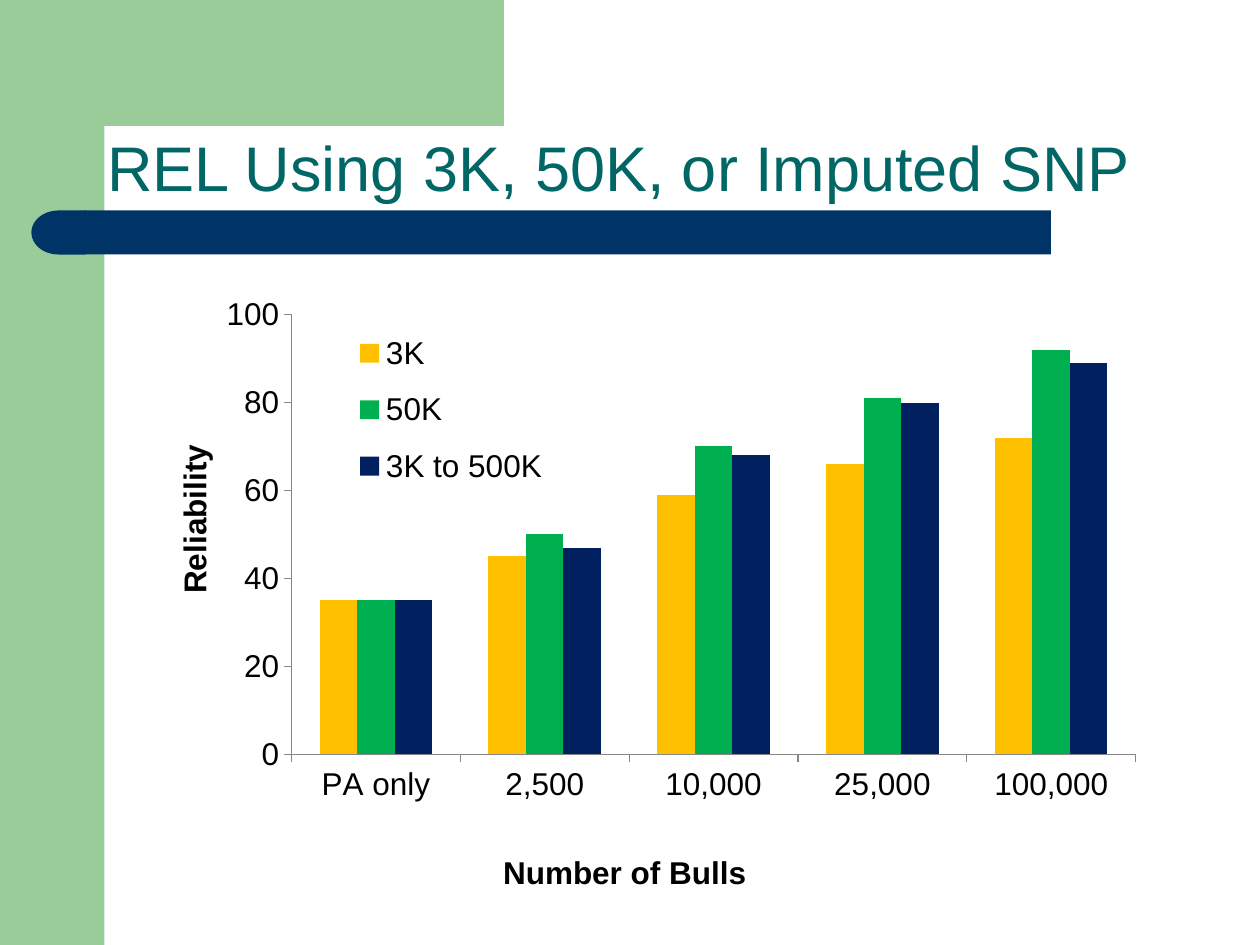
"""Build a slide comparing reliability for three SNP sets in a clustered column chart."""
import math

from lxml import etree
from pptx import Presentation
from pptx import util as u
from pptx.chart.data import CategoryChartData
from pptx.dml.color import RGBColor
from pptx.enum import chart as charts, shapes, text
from pptx.oxml.ns import qn

GREEN = RGBColor(0x99, 0xCC, 0x99)
NAVY = RGBColor(0x00, 0x33, 0x66)
TEAL = RGBColor(0x00, 0x66, 0x66)
BLACK = RGBColor(0x00, 0x00, 0x00)
GREY = RGBColor(0x86, 0x86, 0x86)
SERIES = [
    ("3K", (35, 45, 59, 66, 72), RGBColor(0xFF, 0xC0, 0x00)),
    ("50K", (35, 50, 70, 81, 92), RGBColor(0x00, 0xB0, 0x50)),
    ("3K to 500K", (35, 47, 68, 80, 89), RGBColor(0x00, 0x20, 0x60)),
]


def paint(shape, color):
    """Give a shape a flat fill with no line or shadow."""
    shape.fill.solid()
    shape.fill.fore_color.rgb = color
    shape.line.fill.background()
    shape.shadow.inherit = False


def place(element, index, **settings):
    """Set the manual layout of a chart part."""
    for old in element.findall(qn("c:layout")):
        element.remove(old)
    layout = etree.Element(qn("c:layout"))
    manual = etree.SubElement(layout, qn("c:manualLayout"))
    for name, value in settings.items():
        etree.SubElement(manual, qn(f"c:{name}")).set("val", str(value))
    element.insert(index, layout)


deck = Presentation()
deck.slide_width, deck.slide_height = u.Inches(10), u.Inches(7.5)
page = deck.slides.add_slide(deck.slide_layouts[5])

band = u.Inches(0.83)
side = page.shapes.add_shape(shapes.MSO_SHAPE.RECTANGLE, 0, 0, band, deck.slide_height)
paint(side, GREEN)

radius, edge = 0.33, 0.83
center = edge + radius
arc = [
    (center - radius * math.sin(math.radians(angle)),
     center - radius * math.cos(math.radians(angle)))
    for angle in range(0, 91, 5)
]
outline = page.shapes.build_freeform(3.5, 0, scale=u.Inches(1))
outline.add_line_segments([(3.5, edge), *arc, (edge, 1.28), (0.5, 1.28), (0.5, 0)], close=True)
paint(outline.convert_to_shape(), GREEN)

bar_top, bar_height = u.Inches(1.67), u.Inches(0.35)
bar = page.shapes.add_shape(
    shapes.MSO_SHAPE.RECTANGLE, u.Inches(0.67), bar_top, u.Inches(7.67), bar_height)
cap = page.shapes.add_shape(
    shapes.MSO_SHAPE.FLOWCHART_DELAY, u.Inches(0.25), bar_top, u.Inches(0.43), bar_height)
cap._element.spPr.find(qn("a:xfrm")).set("flipH", "1")
for shape in (bar, cap):
    paint(shape, NAVY)

data = CategoryChartData()
data.categories = ["PA only", "2,500", "10,000", "25,000", "100,000"]
for name, values, color in SERIES:
    data.add_series(name, values)
chart = page.shapes.add_chart(
    charts.XL_CHART_TYPE.COLUMN_CLUSTERED,
    u.Inches(1.17), u.Inches(2.08), u.Inches(8.17), u.Inches(5.21), data).chart
chart.has_title = False
chart.font.size = u.Pt(18)
chart.font.name = "Arial"
chart.font.color.rgb = BLACK

plot = chart.plots[0]
plot.gap_width, plot.overlap = 150, 0
plot.vary_by_categories = False
for series, (name, values, color) in zip(plot.series, SERIES):
    series.format.fill.solid()
    series.format.fill.fore_color.rgb = color

for axis, title, x, y in (
    (chart.category_axis, "Number of Bulls", 0.34, 0.89),
    (chart.value_axis, "Reliability", 0.02, 0.27),
):
    axis.has_major_gridlines = False
    axis.major_tick_mark = charts.XL_TICK_MARK.OUTSIDE
    axis.format.line.color.rgb = GREY
    axis.axis_title.text_frame.text = title
    font = axis.axis_title.text_frame.paragraphs[0].runs[0].font
    font.size, font.bold, font.name = u.Pt(18), True, "Arial"
    font.color.rgb = BLACK
    place(axis.axis_title._element, 1, xMode="edge", yMode="edge", x=x, y=y)
chart.value_axis.minimum_scale = 0
chart.value_axis.maximum_scale = 100
chart.value_axis.major_unit = 20

chart.has_legend = True
chart.legend.position = charts.XL_LEGEND_POSITION.RIGHT
chart.legend.include_in_layout = False
place(chart.legend._element, 1, xMode="edge", yMode="edge", x=0.17, y=0.08, w=0.25, h=0.29)
plot_area = chart._chartSpace.chart.plotArea
place(plot_area, 0, layoutTarget="inner", xMode="edge", yMode="edge",
      x=0.14, y=0.08, w=0.82, h=0.67)

heading = page.shapes.title
heading.left, heading.top = u.Inches(0.75), u.Inches(0.42)
heading.width, heading.height = u.Inches(8.67), u.Inches(1.25)
heading.text_frame.text = "REL Using 3K, 50K, or Imputed SNP"
heading.text_frame.word_wrap = True
heading.text_frame.auto_size = text.MSO_AUTO_SIZE.NONE
heading.text_frame.vertical_anchor = text.MSO_ANCHOR.BOTTOM
para = heading.text_frame.paragraphs[0]
para.alignment = text.PP_ALIGN.LEFT
span = para.runs[0]
span.font.size, span.font.name = u.Pt(36), "Arial"
span.font.color.rgb = TEAL
page.shapes._spTree.append(heading._element)

deck.save("out.pptx")
